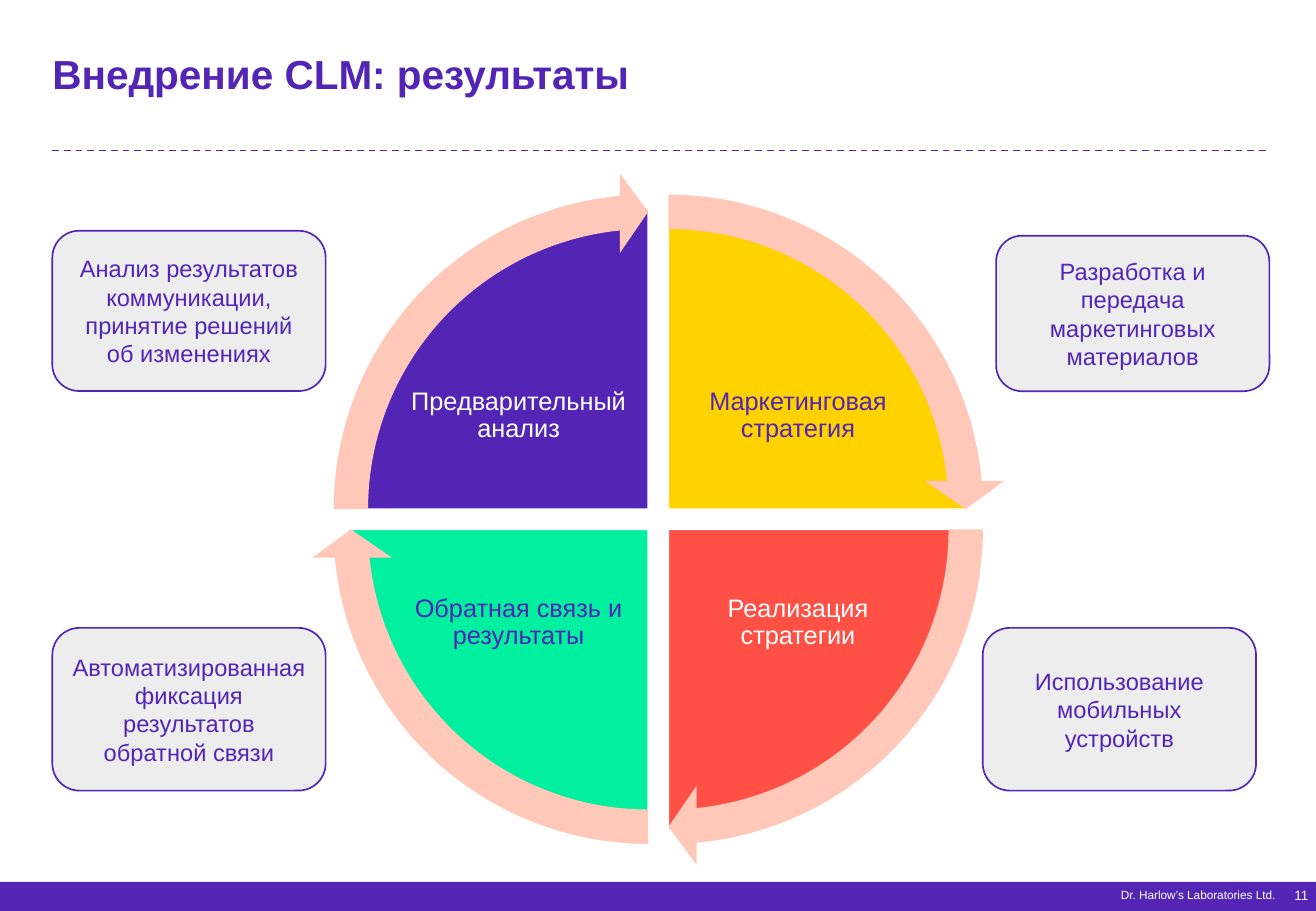
import dataclasses
import typing

import lxml.etree
import pptx
import pptx.dml.color
import pptx.enum.dml
import pptx.enum.shapes
import pptx.enum.text
import pptx.oxml.ns
import pptx.util

Pt = pptx.util.Pt
Shapes = pptx.enum.shapes.MSO_SHAPE
Align = pptx.enum.text.PP_ALIGN
Anchor = pptx.enum.text.MSO_ANCHOR


@dataclasses.dataclass(frozen=True)
class Theme:
    font: str = "Arial"
    violet: str = "5225B5"
    yellow: str = "FFD200"
    red: str = "FF5046"
    green: str = "00F0A0"
    peach: str = "FFC8B9"
    grey: str = "EDEDED"
    white: str = "FFFFFF"
    title_size: float = 24
    label_size: float = 15
    note_size: float = 14
    page_size: float = 8
    footer_size: float = 7


THEME = Theme()


class Box(typing.NamedTuple):
    left: float
    top: float
    width: float
    height: float

    def lengths(self) -> list[pptx.util.Length]:
        return [Pt(value) for value in self]


class TextStyle(typing.NamedTuple):
    size: float
    color: str
    align: Align = Align.LEFT
    anchor: Anchor = Anchor.TOP
    insets: tuple[float, float] = (7.2, 3.6)
    spacing: float = 1.0
    bold: bool = False


class Quadrant(typing.NamedTuple):
    text: str
    side_x: int
    side_y: int
    start: int
    fill: str
    text_color: str


class Note(typing.NamedTuple):
    text: str
    box: Box


CENTER_X, CENTER_Y = 390.2, 307.8
HALF_GAP = 6
PIE_SIZE, ARROW_SIZE = 355.7, 399.6
QUARTER_TURN = 54
HEAD_ANGLE = 3.275
LABEL_CENTER_X = 390.2
LABEL_SHIFT_X, LABEL_SHIFT_Y = 82.8, 61.2
LABEL_WIDTH, LABEL_HEIGHT = 131, 97.2

QUADRANTS = [
    Quadrant("Маркетинговая стратегия", 1, -1, 162, THEME.yellow, THEME.violet),
    Quadrant("Реализация стратегии", 1, 1, 0, THEME.red, THEME.white),
    Quadrant("Обратная связь и результаты", -1, 1, 54, THEME.green, THEME.violet),
    Quadrant("Предварительный анализ", -1, -1, 108, THEME.violet, THEME.white),
]

NOTES = [
    Note("Анализ результатов коммуникации, принятие решений об изменениях",
         Box(31, 136.8, 162, 95)),
    Note("Автоматизированная фиксация результатов обратной связи",
         Box(31, 372.2, 162, 96.5)),
    Note("Разработка и передача маркетинговых материалов",
         Box(590.4, 139.7, 162, 92.2)),
    Note("Использование мобильных устройств",
         Box(582.5, 372.2, 162, 96.5)),
]


def rgb(color: str) -> pptx.dml.color.RGBColor:
    return pptx.dml.color.RGBColor.from_string(color)


def write(shape, text: str, style: TextStyle) -> None:
    frame = shape.text_frame
    frame.word_wrap = True
    frame.vertical_anchor = style.anchor
    horizontal, vertical = style.insets
    frame.margin_left = frame.margin_right = Pt(horizontal)
    frame.margin_top = frame.margin_bottom = Pt(vertical)
    paragraph = frame.paragraphs[0]
    paragraph.alignment = style.align
    paragraph.line_spacing = style.spacing
    run = paragraph.add_run()
    run.text = text
    run.font.name = THEME.font
    run.font.size = Pt(style.size)
    run.font.bold = style.bold
    run.font.color.rgb = rgb(style.color)


def add_text(slide, text: str, box: Box, style: TextStyle) -> None:
    write(slide.shapes.add_textbox(*box.lengths()), text, style)


def add_figure(slide, kind: Shapes, box: Box, fill: str,
               line: str | None = None, adjustments: tuple[float, ...] = ()):
    shape = slide.shapes.add_shape(kind, *box.lengths())
    shape.shadow.inherit = False
    shape.fill.solid()
    shape.fill.fore_color.rgb = rgb(fill)
    if line:
        shape.line.color.rgb = rgb(line)
        shape.line.width = Pt(1)
    else:
        shape.line.fill.background()
    for index, value in enumerate(adjustments):
        shape.adjustments[index] = value
    return shape


def add_divider(slide) -> None:
    connector = slide.shapes.add_connector(
        pptx.enum.shapes.MSO_CONNECTOR.STRAIGHT, Pt(31), Pt(89.3), Pt(752.4), Pt(89.3))
    connector.line.color.rgb = rgb(THEME.violet)
    connector.line.width = Pt(1)
    connector.line.dash_style = pptx.enum.dml.MSO_LINE.DASH
    lxml.etree.SubElement(connector._element.spPr, pptx.oxml.ns.qn("a:effectLst"))


def quadrant_box(quadrant: Quadrant, size: float) -> Box:
    return Box(CENTER_X + quadrant.side_x * HALF_GAP - size / 2,
               CENTER_Y + quadrant.side_y * HALF_GAP - size / 2, size, size)


def add_sector(slide, quadrant: Quadrant) -> None:
    end = (quadrant.start + QUARTER_TURN) % (4 * QUARTER_TURN)
    add_figure(slide, Shapes.PIE, quadrant_box(quadrant, PIE_SIZE), quadrant.fill,
               THEME.white, (quadrant.start, end))
    label = Box(LABEL_CENTER_X + quadrant.side_x * LABEL_SHIFT_X - LABEL_WIDTH / 2,
                CENTER_Y + quadrant.side_y * LABEL_SHIFT_Y - LABEL_HEIGHT / 2,
                LABEL_WIDTH, LABEL_HEIGHT)
    add_text(slide, quadrant.text, label,
             TextStyle(THEME.label_size, quadrant.text_color, Align.CENTER,
                       Anchor.MIDDLE, (1.3, 1.3), 0.9))


def add_arrow(slide, quadrant: Quadrant) -> None:
    end = quadrant.start + QUARTER_TURN - HEAD_ANGLE
    add_figure(slide, Shapes.CIRCULAR_ARROW, quadrant_box(quadrant, ARROW_SIZE),
               THEME.peach, None, (0.051, HEAD_ANGLE, end, quadrant.start, 0.059))


def add_note(slide, note: Note) -> None:
    shape = add_figure(slide, Shapes.ROUNDED_RECTANGLE, note.box, THEME.grey, THEME.violet)
    write(shape, note.text,
          TextStyle(THEME.note_size, THEME.violet, Align.CENTER, Anchor.MIDDLE))


def main() -> None:
    presentation = pptx.Presentation()
    presentation.slide_width = Pt(780)
    presentation.slide_height = Pt(540)
    slide = presentation.slides.add_slide(presentation.slide_layouts[6])

    add_figure(slide, Shapes.RECTANGLE, Box(0, 522.7, 780, 17.3), THEME.violet)
    add_text(slide, "11", Box(752.4, 522.7, 26, 15),
             TextStyle(THEME.page_size, THEME.white, Align.RIGHT, insets=(2.9, 2.9)))
    add_divider(slide)
    add_text(slide, "Dr. Harlow’s Laboratories Ltd.", Box(517, 524.2, 246, 14.4),
             TextStyle(THEME.footer_size, THEME.white, Align.RIGHT, spacing=0.8))
    add_text(slide, "Внедрение CLM: результаты", Box(31, 28.8, 721.4, 54),
             TextStyle(THEME.title_size, THEME.violet, insets=(0, 0), bold=True))

    for quadrant in QUADRANTS:
        add_sector(slide, quadrant)
    for quadrant in QUADRANTS:
        add_arrow(slide, quadrant)
    for note in NOTES:
        add_note(slide, note)

    presentation.save("out.pptx")


if __name__ == "__main__":
    main()
